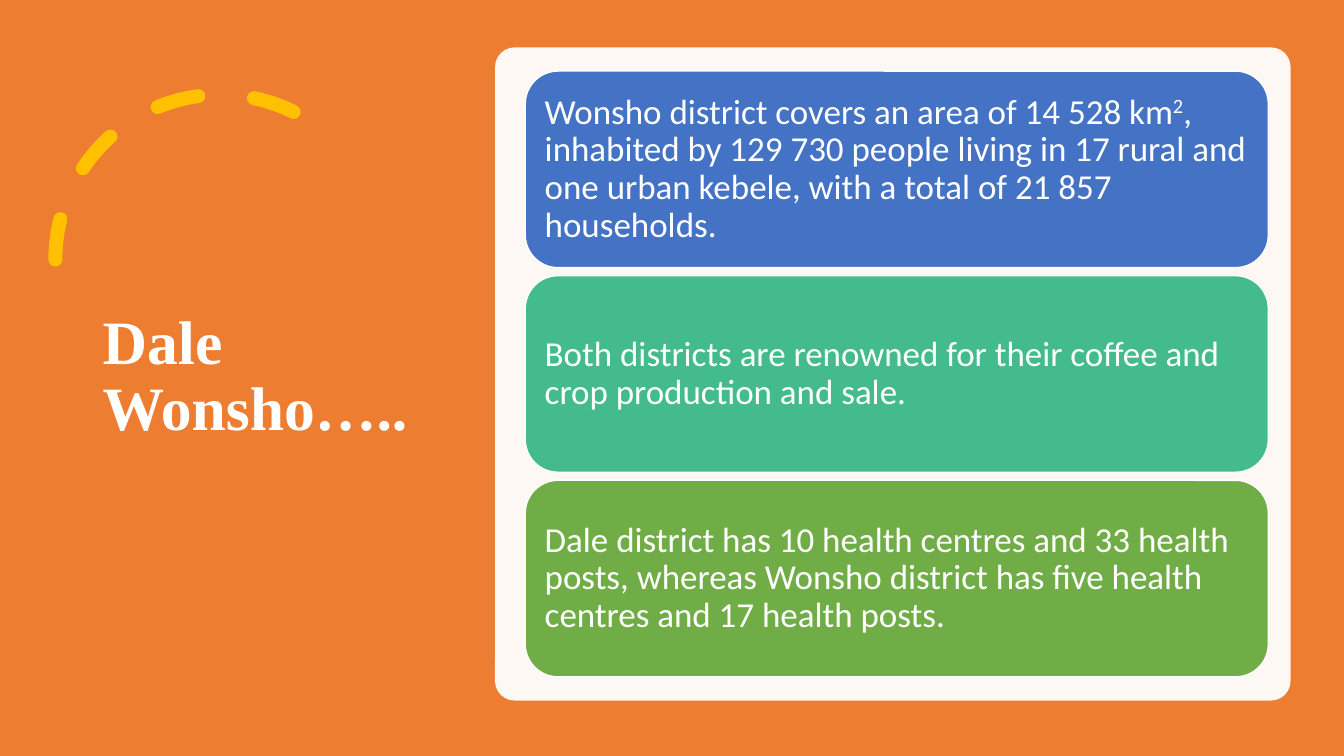
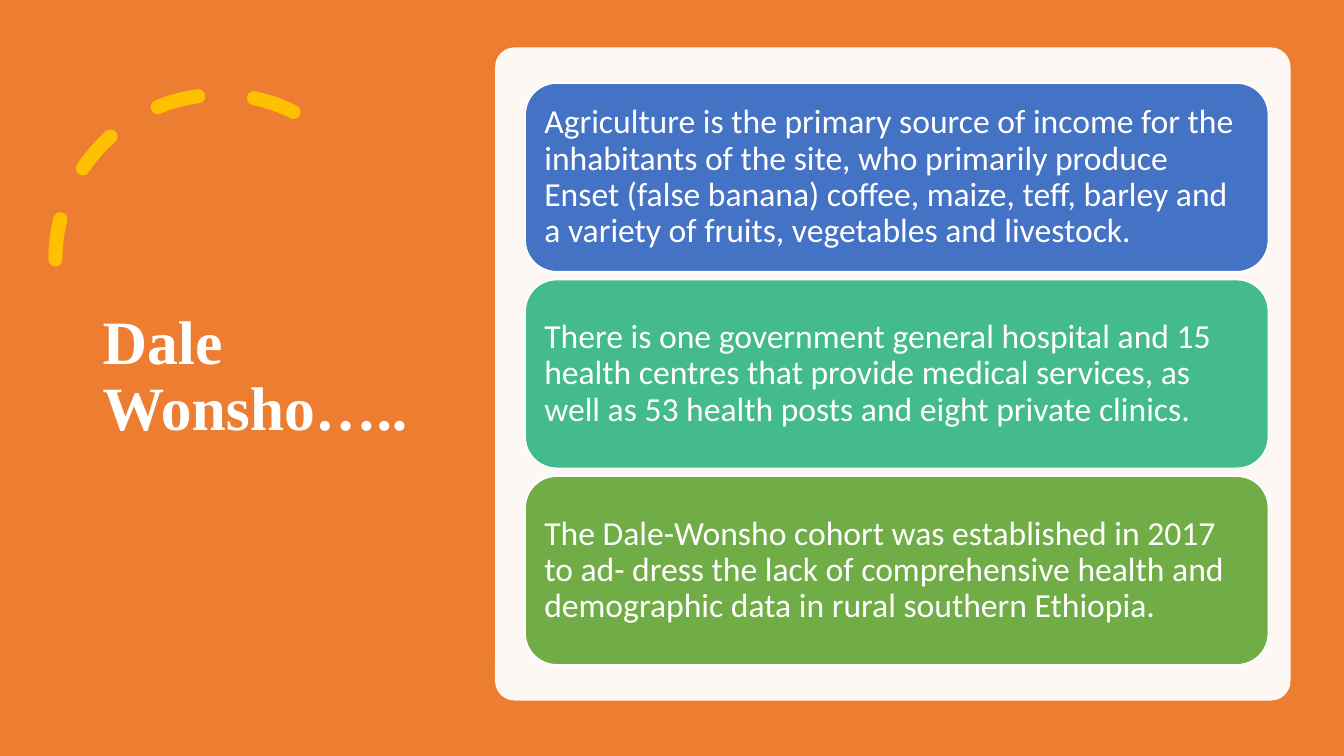
from dataclasses import dataclass
from lxml.etree import SubElement as Sub
from pptx import Presentation
from pptx.dml.color import RGBColor as Rgb
from pptx.enum.dml import MSO_LINE as Dash
from pptx.enum.shapes import MSO_SHAPE as Kind
from pptx.enum.text import MSO_ANCHOR as Anchor, PP_ALIGN as Align
from pptx.oxml.ns import qn
from pptx.util import Inches, Pt


@dataclass(frozen=True)
class Theme:
    back: str = "ED7D31"
    white: str = "FFFFFF"
    gold: str = "FFC000"
    cards: tuple = ("4472C4", "43BB8D", "70AD47")
    serif: str = "Times New Roman"
    sans: str = "Calibri"
    title: int = 44


THEME = Theme()
WIDE, HIGH = 13.33, 7.5
PANEL = (4.91, 0.47, 7.89, 6.48)
LEFT, SPAN, GAP = 5.21, 7.37, 0.08
TITLE = "Dale Wonsho….."

PAGES = [
    (25, 1.95, [
        ["Wonsho district covers an area of 14 528 km", "2",
         ", inhabited by 129 730 people living in 17 rural and one urban "
         "kebele, with a total of 21 857 households."],
        ["Both districts are renowned for their coffee and crop production "
         "and sale."],
        ["Dale district has 10 health centres and 33 health posts, whereas "
         "Wonsho district has five health centres and 17 health posts."],
    ]),
    (24, 1.87, [
        ["Agriculture is the primary source of income for the inhabitants of "
         "the site, who primarily produce Enset (false banana) coffee, maize, "
         "teff, barley and a variety of fruits, vegetables and livestock."],
        ["There is one government general hospital and 15 health centres that "
         "provide medical services, as well as 53 health posts and eight "
         "private clinics."],
        ["The Dale-Wonsho cohort was established in 2017 to ad- dress the "
         "lack of comprehensive health and demographic data in rural southern "
         "Ethiopia."],
    ]),
]


def add_shape(slide, kind, box, fill=None, line=None, width=1):
    shape = slide.shapes.add_shape(kind, *map(Inches, box))
    shape.shadow.inherit = False
    if fill:
        shape.fill.solid()
        shape.fill.fore_color.rgb = Rgb.from_string(fill)
    else:
        shape.fill.background()
    if line:
        shape.line.color.rgb = Rgb.from_string(line)
        shape.line.width = Pt(width)
    else:
        shape.line.fill.background()
    return shape


def set_text(shape, parts, face, size, bold=False):
    frame = shape.text_frame
    frame.word_wrap = True
    frame.vertical_anchor = Anchor.MIDDLE
    para = frame.paragraphs[0]
    para.alignment = Align.LEFT
    para.line_spacing = 0.9
    font = para.font
    font.name, font.size, font.bold = face, Pt(size), bold
    font.color.rgb = Rgb.from_string(THEME.white)
    for spot, part in enumerate(parts):
        run = para.add_run()
        run.text = part
        if spot % 2:
            run.font._element.set("baseline", "30000")


def add_arc(slide):
    arc = add_shape(slide, Kind.ARC, (0.55, 0.94, 3.27, 3.27),
                    line=THEME.gold, width=10)
    arc.adjustments[0] = 146.13
    arc.adjustments[1] = 0
    arc.line.dash_style = Dash.DASH
    arc.line._get_or_add_ln().set("cap", "rnd")
    arc._element.spPr.xfrm.set("flipH", "1")


def add_title(slide):
    box = slide.shapes.add_textbox(*map(Inches, (0.92, 0.7, 3.23, 6.09)))
    set_text(box, [TITLE], THEME.serif, THEME.title, True)


def add_panel(slide):
    panel = add_shape(slide, Kind.ROUNDED_RECTANGLE, PANEL, THEME.white)
    panel.adjustments[0] = 0.03
    tint = panel._element.spPr.find(qn("a:solidFill"))[0]
    Sub(tint, qn("a:alpha"), val="95000")


def add_cards(slide, size, tall, texts):
    step = tall + GAP
    top = PANEL[1] + (PANEL[3] - len(texts) * step + GAP) / 2
    for row, (fill, parts) in enumerate(zip(THEME.cards, texts)):
        box = (LEFT, top + row * step, SPAN, tall)
        card = add_shape(slide, Kind.ROUNDED_RECTANGLE, box, fill, THEME.white)
        frame = card.text_frame
        frame.margin_left = frame.margin_right = Inches(0.1)
        frame.margin_top = frame.margin_bottom = Inches(0.1)
        set_text(card, parts, THEME.sans, size)


def main():
    deck = Presentation()
    deck.slide_width, deck.slide_height = Inches(WIDE), Inches(HIGH)
    for size, tall, texts in PAGES:
        slide = deck.slides.add_slide(deck.slide_layouts[6])
        add_shape(slide, Kind.RECTANGLE, (0, 0, WIDE, HIGH), THEME.back)
        add_arc(slide)
        add_title(slide)
        add_panel(slide)
        add_cards(slide, size, tall, texts)
    deck.save("out.pptx")


if __name__ == "__main__":
    main()
